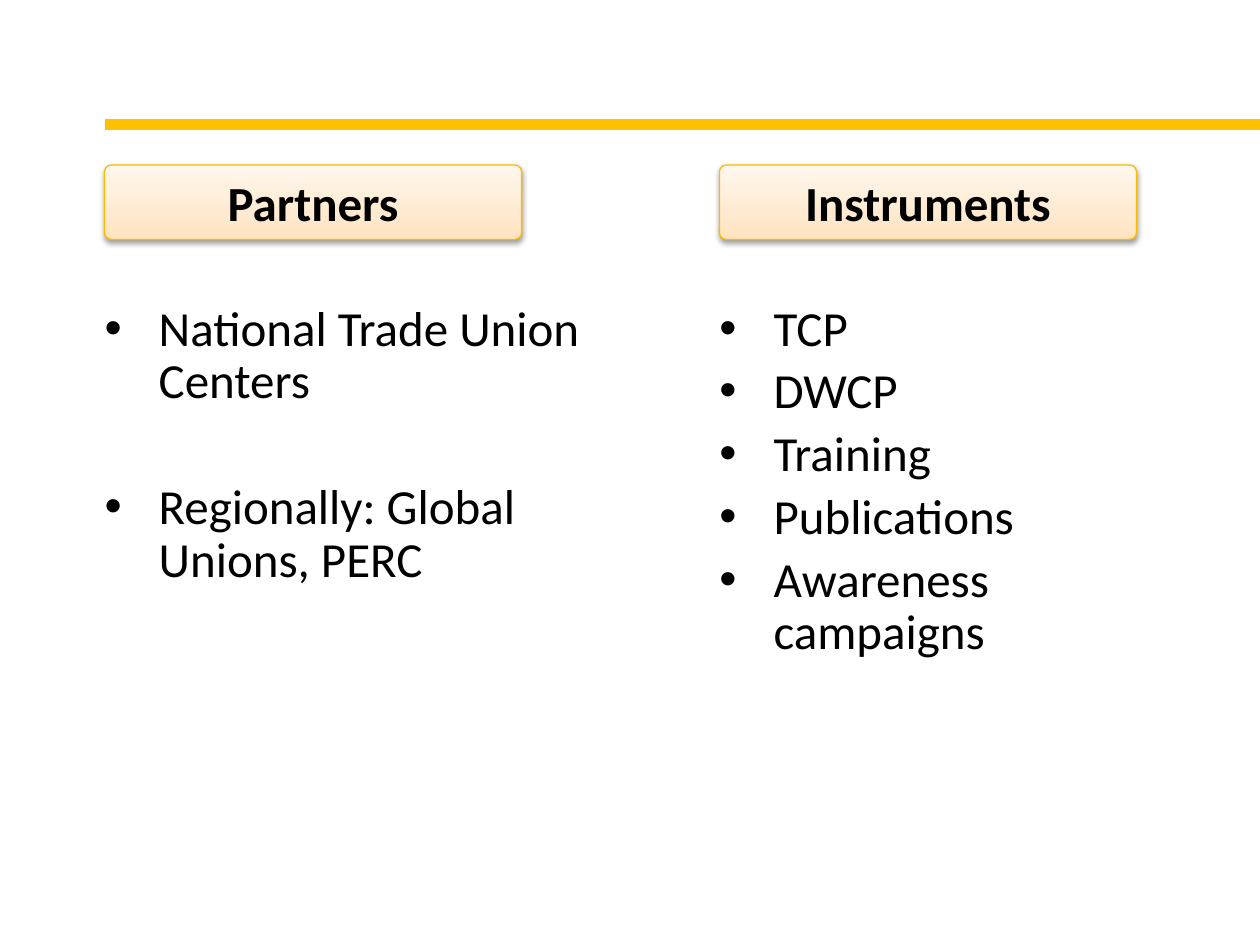
from lxml.etree import SubElement
from pptx import Presentation
from pptx.dml.color import RGBColor
from pptx.enum.shapes import MSO_CONNECTOR, MSO_SHAPE
from pptx.enum.text import MSO_ANCHOR, MSO_AUTO_SIZE, PP_ALIGN
from pptx.oxml.ns import qn
from pptx.util import Inches, Pt

WIDTH, HEIGHT = 10, 7.5
LEFT, PITCH = 0.83, 4.88
RULE_TOP, HEADING_TOP, LIST_TOP = 0.99, 1.31, 2.41
HEADING_WIDTH, HEADING_HEIGHT = 3.31, 0.59
INDENT = 0.43
SIZE, LIST_GAP, WIDE_GAP = 28, 5.6, 41.4
BLACK, GOLD, AMBER = "000000", "FFC000", "F9BC00"
GRADIENT = [(0, "FFE2BD"), (35, "FFEAD1"), (100, "FFF7EE")]

COLUMNS = [
    dict(heading="Partners", width=3.94, height=2.31, gap=WIDE_GAP,
         items=["National Trade Union Centers", "Regionally: Global Unions, PERC"]),
    dict(heading="Instruments", width=3.64, height=2.92, gap=LIST_GAP,
         items=["TCP", "DWCP", "Training", "Publications", "Awareness campaigns"]),
]


def color(value):
    return RGBColor.from_string(value)


def element(parent, tag, **attributes):
    return SubElement(parent, qn(tag), {key: str(value) for key, value in attributes.items()})


def write(para, text, bold=False, align=PP_ALIGN.LEFT, bullet=False, before=0, spacing=None):
    para.alignment = align
    para.space_before = Pt(before)
    para.line_spacing = spacing
    if bullet:
        properties = para._p.get_or_add_pPr()
        properties.set("marL", str(Inches(INDENT)))
        properties.set("indent", str(-Inches(INDENT)))
        element(properties, "a:buFont", typeface="Arial")
        element(properties, "a:buChar", char="•")
    span = para.add_run()
    span.text = text
    font = span.font
    font.name, font.size, font.bold = "Calibri", Pt(SIZE), bold
    font.color.rgb = color(BLACK)


def add_heading(page, left, text):
    box = page.shapes.add_shape(MSO_SHAPE.ROUNDED_RECTANGLE, Inches(left), Inches(HEADING_TOP),
                                Inches(HEADING_WIDTH), Inches(HEADING_HEIGHT))
    box.adjustments[0] = 0.09
    box.fill.gradient()
    box.fill.gradient_angle = 90
    stops = box._element.spPr.find(".//" + qn("a:gsLst"))
    for stop in list(stops):
        stops.remove(stop)
    for position, value in GRADIENT:
        stop = element(stops, "a:gs", pos=position * 1000)
        element(stop, "a:srgbClr", val=value)
    box.line.color.rgb = color(AMBER)
    box.line.width = Pt(0.75)
    box.shadow.inherit = False
    effects = box._element.spPr.find(qn("a:effectLst"))
    shadow = element(effects, "a:outerShdw", blurRad=Pt(3.1), dist=Pt(1.6),
                     dir=90 * 60000, rotWithShape=0)
    element(element(shadow, "a:srgbClr", val=BLACK), "a:alpha", val=38000)
    box.text_frame.vertical_anchor = MSO_ANCHOR.MIDDLE
    write(box.text_frame.paragraphs[0], text, bold=True, align=PP_ALIGN.CENTER)


def fill_list(box, left, column):
    box.left, box.top = Inches(left), Inches(LIST_TOP)
    box.width, box.height = Inches(column["width"]), Inches(column["height"])
    frame = box.text_frame
    frame.word_wrap = True
    frame.auto_size = MSO_AUTO_SIZE.SHAPE_TO_FIT_TEXT
    frame.vertical_anchor = MSO_ANCHOR.TOP
    frame.margin_left = frame.margin_right = frame.margin_top = frame.margin_bottom = 0
    for index, item in enumerate(column["items"]):
        para = frame.add_paragraph() if index else frame.paragraphs[0]
        write(para, item, bullet=True, before=column["gap"] if index else 0, spacing=0.9)


def add_rule(page):
    rule = page.shapes.add_connector(MSO_CONNECTOR.STRAIGHT, Inches(LEFT), Inches(RULE_TOP),
                                     Inches(WIDTH), Inches(RULE_TOP))
    rule.line.color.rgb = color(GOLD)
    rule.line.width = Pt(6)
    element(rule._element.spPr, "a:effectLst")


def main():
    deck = Presentation()
    deck.slide_width, deck.slide_height = Inches(WIDTH), Inches(HEIGHT)
    page = deck.slides.add_slide(deck.slide_layouts.get_by_name("Two Content"))
    title, *lists = page.placeholders
    title._element.getparent().remove(title._element)
    add_rule(page)
    for index, (column, box) in enumerate(zip(COLUMNS, lists)):
        left = LEFT + index * PITCH
        add_heading(page, left, column["heading"])
        fill_list(box, left, column)
    deck.save("out.pptx")


if __name__ == "__main__":
    main()
